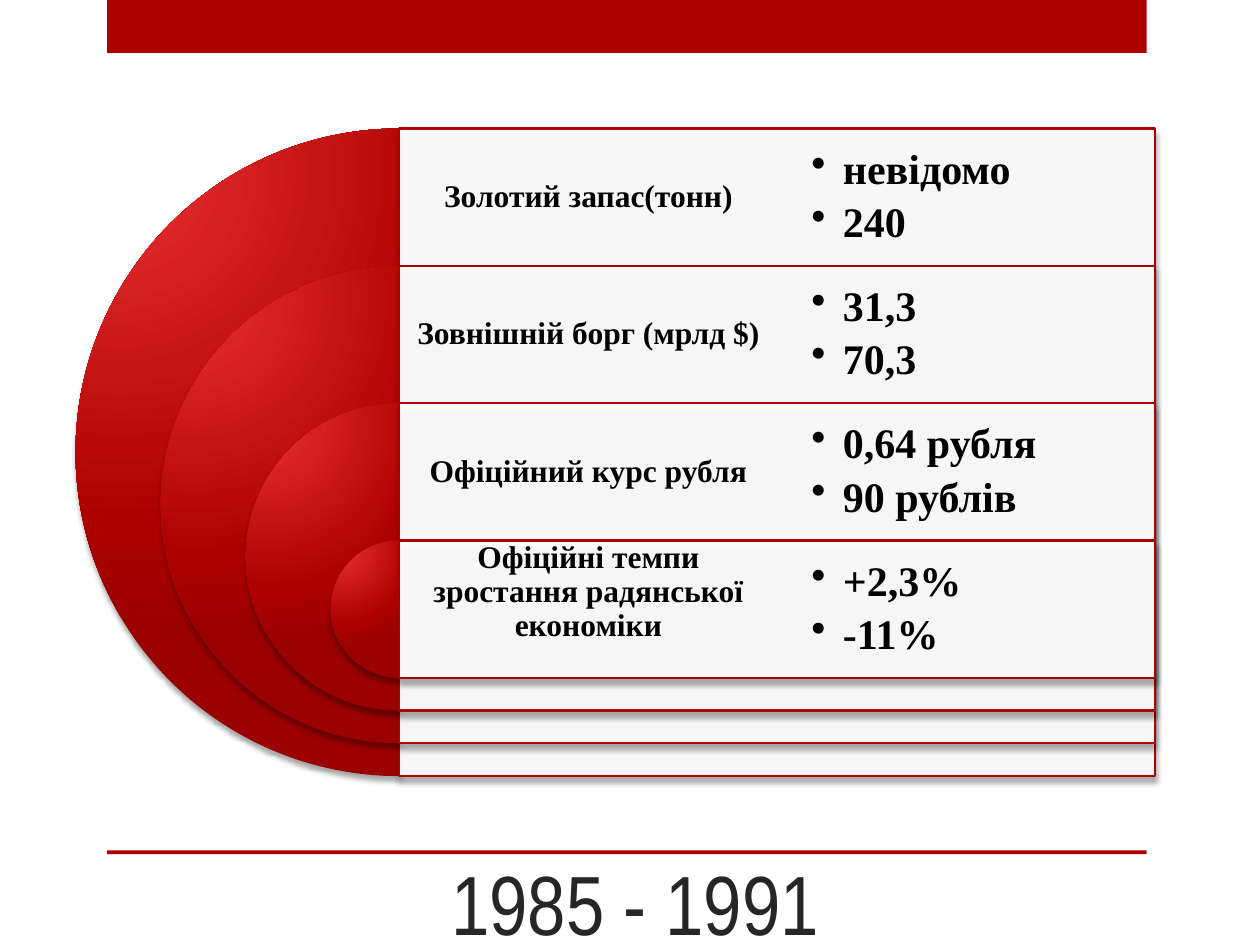
"""Build the slide of Soviet economic indicators for 1985 - 1991."""
from lxml.etree import SubElement
from pptx import Presentation
from pptx.dml.color import RGBColor
from pptx.enum.shapes import MSO_SHAPE as Shape
from pptx.enum.text import MSO_ANCHOR as Anchor, MSO_AUTO_SIZE as AutoSize, PP_ALIGN as Align
from pptx.oxml.ns import qn
from pptx.util import Inches, Pt

TITLE = "1985 - 1991"
INDICATORS = [
    ("Золотий запас(тонн)", ["невідомо", "240"]),
    ("Зовнішній борг (мрлд $)", ["31,3", "70,3"]),
    ("Офіційний курс рубля", ["0,64 рубля", "90 рублів"]),
    ("Офіційні темпи зростання радянської економіки", ["+2,3%", "-11%"]),
]
COLORS = {"red": "AD0101", "light": "E62F2F", "dark": "9C0101",
          "panel": "FFFFFF", "text": "000000", "title": "262626"}
PIE_STOPS = [(0, "light"), (76, "red"), (100, "dark")]
WIDTH, HEIGHT = 10, 7.5
BAND_LEFT, BAND_WIDTH = 0.85, 8.25
AXIS, TOP, COLUMN = 3.17, 1.02, 3.0
ROW, BOTTOM_STEP = 1.09, 0.26
LABEL_INSET, VALUE_INSET, LABEL_LIFT = 0.07, 0.27, 0.27


def rgb(name):
    return RGBColor.from_string(COLORS[name])


def xml_child(parent, tag, **attributes):
    return SubElement(parent, qn(tag), {key: str(value) for key, value in attributes.items()})


def add_block(slide, kind, left, top, width, height, fill=None, line=None):
    block = slide.shapes.add_shape(kind, *map(Inches, (left, top, width, height)))
    block.shadow.inherit = False
    if fill:
        block.fill.solid()
        block.fill.fore_color.rgb = rgb(fill)
    if line:
        block.line.color.rgb = rgb(line)
        block.line.width = Pt(1.25)
    else:
        block.line.fill.background()
    return block


def cast_shadow(block):
    effects = block._element.spPr.find(qn("a:effectLst"))
    shadow = xml_child(effects, "a:outerShdw", blurRad=Pt(3), dist=Pt(3),
                       dir=90 * 60000, rotWithShape=0)
    black = xml_child(shadow, "a:srgbClr", val=COLORS["text"])
    xml_child(black, "a:alpha", val=35000)


def add_half_disc(slide, top, size):
    disc = add_block(slide, Shape.PIE, AXIS - size / 2, top, size, size)
    disc.adjustments[0], disc.adjustments[1] = 54, 162
    properties = disc._element.spPr
    gradient = xml_child(properties, "a:gradFill", rotWithShape=1)
    properties.find(qn("a:prstGeom")).addnext(gradient)
    stops = xml_child(gradient, "a:gsLst")
    for position, color in PIE_STOPS:
        stop = xml_child(stops, "a:gs", pos=position * 1000)
        xml_child(stop, "a:srgbClr", val=COLORS[color])
    center = xml_child(gradient, "a:path", path="circle")
    xml_child(center, "a:fillToRect", l=15000, t=15000, r=100000, b=100000)
    cast_shadow(disc)


def add_panel(slide, top, height):
    panel = add_block(slide, Shape.RECTANGLE, AXIS, top, 2 * COLUMN, height, "panel", "red")
    color = panel._element.spPr.find(qn("a:solidFill")).find(qn("a:srgbClr"))
    xml_child(color, "a:alpha", val=90000)
    cast_shadow(panel)


def write(holder, lines, *, size, font="Times New Roman", color="text", bold=True,
          align=Align.CENTER, anchor=Anchor.MIDDLE, inset=None, lift=0,
          spacing=None, after=0, bullet=None):
    frame = holder.text_frame
    frame.word_wrap, frame.auto_size = True, AutoSize.NONE
    frame.vertical_anchor = anchor
    if inset is not None:
        frame.margin_left = frame.margin_right = frame.margin_top = Inches(inset)
        frame.margin_bottom = Inches(inset + lift)
    for index, line in enumerate(lines):
        paragraph = frame.add_paragraph() if index else frame.paragraphs[0]
        paragraph.alignment = align
        paragraph.line_spacing, paragraph.space_after = spacing, Pt(after)
        if bullet:
            paragraph.level = 1
            properties = paragraph._p.get_or_add_pPr()
            properties.set("marL", str(Inches(0.25)))
            properties.set("indent", str(-Inches(0.25)))
            xml_child(properties, "a:buChar", char=bullet)
        run = paragraph.add_run()
        run.text = line
        run.font.name, run.font.size, run.font.bold = font, Pt(size), bold
        run.font.color.rgb = rgb(color)


def add_indicator(slide, row, label, values):
    top = TOP + row * ROW
    size = ROW + (len(INDICATORS) - 1 - row) * (ROW + BOTTOM_STEP)
    add_half_disc(slide, top, size)
    add_panel(slide, top, size)
    label_box, values_box = (
        slide.shapes.add_textbox(*map(Inches, (AXIS + column * COLUMN, top, COLUMN, ROW)))
        for column in range(2))
    lift = LABEL_LIFT if row == len(INDICATORS) - 1 else 0
    write(label_box, [label], size=18, inset=LABEL_INSET, lift=lift, spacing=0.9, after=6.3)
    write(values_box, values, size=24, align=Align.LEFT, inset=VALUE_INSET,
          spacing=0.9, after=4.5, bullet="•")


def main():
    deck = Presentation()
    deck.slide_width, deck.slide_height = Inches(WIDTH), Inches(HEIGHT)
    slide = deck.slides.add_slide(deck.slide_layouts[5])
    for top, height in [(0, 0.42), (6.75, 0.03)]:
        add_block(slide, Shape.RECTANGLE, BAND_LEFT, top, BAND_WIDTH, height, "red")
    for row, (label, values) in enumerate(INDICATORS):
        add_indicator(slide, row, label, values)
    title = slide.shapes.title
    title.left, title.top, title.width, title.height = map(Inches, (3.11, 6.98, 3.86, 0.63))
    write(title, [TITLE], size=48, font="Arial Narrow", color="title", bold=False,
          anchor=Anchor.BOTTOM)
    deck.save("out.pptx")


if __name__ == "__main__":
    main()
